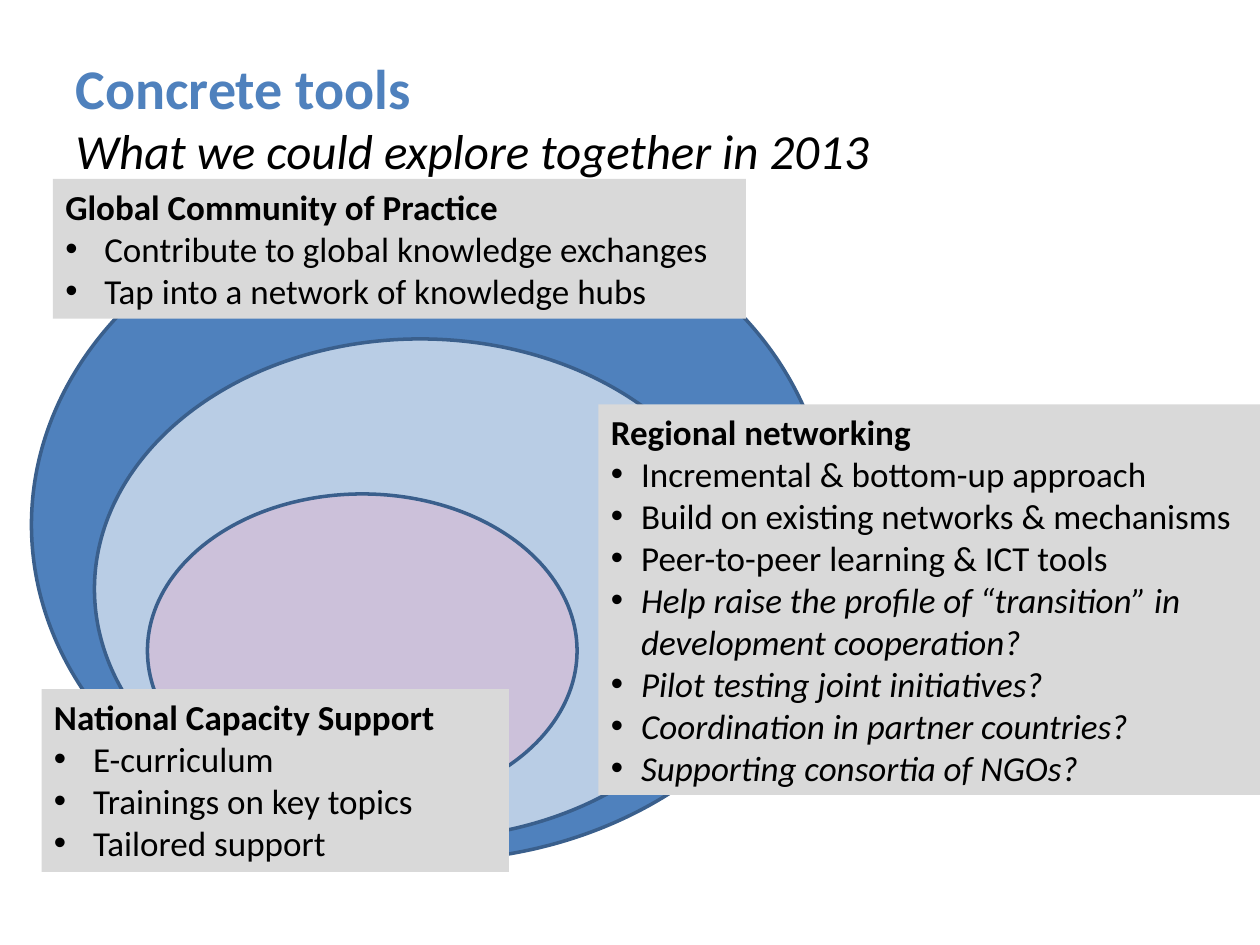
from dataclasses import dataclass

from lxml.etree import SubElement
from pptx import Presentation
from pptx.dml.color import RGBColor
from pptx.enum.shapes import MSO_SHAPE
from pptx.enum.text import MSO_ANCHOR, MSO_AUTO_SIZE, PP_ALIGN
from pptx.oxml.ns import qn
from pptx.slide import Slide
from pptx.util import Inches, Pt

BLUE = RGBColor(0x4F, 0x81, 0xBD)
LIGHT_BLUE = RGBColor(0xB9, 0xCD, 0xE5)
LILAC = RGBColor(0xCC, 0xC1, 0xDA)
OUTLINE = RGBColor(0x3A, 0x5F, 0x8C)
GREY = RGBColor(0xD9, 0xD9, 0xD9)
BLACK = RGBColor(0, 0, 0)


@dataclass(frozen=True)
class Area:
    left: float
    top: float
    width: float
    height: float

    def lengths(self) -> tuple:
        return tuple(map(Inches, (self.left, self.top, self.width, self.height)))


@dataclass(frozen=True)
class Ring:
    area: Area
    color: RGBColor


@dataclass(frozen=True)
class Panel:
    area: Area
    heading: str
    points: tuple[str, ...]
    questions: tuple[str, ...] = ()
    indent: float = 0.31


RINGS = (
    Ring(Area(0.25, 1.5, 6.33, 5.33), BLUE),
    Ring(Area(0.75, 2.69, 5.17, 3.97), LIGHT_BLUE),
    Ring(Area(1.17, 3.92, 3.41, 2.49), LILAC),
)

PANELS = (
    Panel(
        Area(0.42, 1.42, 5.5, 1.11),
        "Global Community of Practice",
        ("Contribute to global knowledge exchanges", "Tap into a network of knowledge hubs"),
    ),
    Panel(
        Area(4.75, 3.21, 5.67, 3.1),
        "Regional networking",
        (
            "Incremental & bottom-up approach",
            "Build on existing networks & mechanisms",
            "Peer-to-peer learning & ICT tools",
        ),
        (
            "Help raise the profile of “transition” in development cooperation?",
            "Pilot testing joint initiatives?",
            "Coordination in partner countries?",
            "Supporting consortia of NGOs?",
        ),
        indent=0.24,
    ),
    Panel(
        Area(0.33, 5.47, 3.71, 1.45),
        "National Capacity Support",
        ("E-curriculum", "Trainings on key topics", "Tailored support"),
    ),
)


def add_text(paragraph, text: str, size: int, color: RGBColor = BLACK,
             bold: bool = False, italic: bool = False) -> None:
    run = paragraph.add_run()
    run.text = text
    formats = {"name": "Calibri", "size": Pt(size), "bold": bold, "italic": italic}
    for name, value in formats.items():
        setattr(run.font, name, value)
    run.font.color.rgb = color


def set_bullet(paragraph, indent: float) -> None:
    properties = paragraph._p.get_or_add_pPr()
    properties.set("marL", str(Inches(indent)))
    properties.set("indent", str(Inches(-indent)))
    SubElement(properties, qn("a:buFont")).set("typeface", "Arial")
    SubElement(properties, qn("a:buChar")).set("char", "•")


def fill_title(slide: Slide) -> None:
    title = slide.shapes.title
    title.left, title.top, title.width, title.height = Area(0.5, 0.3, 9, 1.25).lengths()
    title.text_frame.vertical_anchor = MSO_ANCHOR.MIDDLE
    paragraph = title.text_frame.paragraphs[0]
    paragraph.alignment = PP_ALIGN.LEFT
    add_text(paragraph, "Concrete tools", 32, BLUE, bold=True)
    paragraph.add_line_break()
    add_text(paragraph, "What we could explore together in 2013", 28, italic=True)


def add_ring(slide: Slide, ring: Ring) -> None:
    shape = slide.shapes.add_shape(MSO_SHAPE.OVAL, *ring.area.lengths())
    shape.shadow.inherit = False
    shape.fill.solid()
    shape.fill.fore_color.rgb = ring.color
    shape.line.color.rgb = OUTLINE
    shape.line.width = Pt(2)


def add_panel(slide: Slide, panel: Panel) -> None:
    shape = slide.shapes.add_textbox(*panel.area.lengths())
    shape.fill.solid()
    shape.fill.fore_color.rgb = GREY
    frame = shape.text_frame
    formats = {"word_wrap": True, "auto_size": MSO_AUTO_SIZE.SHAPE_TO_FIT_TEXT}
    for name, value in formats.items():
        setattr(frame, name, value)
    add_text(frame.paragraphs[0], panel.heading, 20, bold=True)
    for text in panel.points + panel.questions:
        paragraph = frame.add_paragraph()
        set_bullet(paragraph, panel.indent)
        add_text(paragraph, text, 20, italic=text in panel.questions)


def main() -> None:
    presentation = Presentation()
    presentation.slide_width = Inches(10)
    presentation.slide_height = Inches(7.5)
    slide = presentation.slides.add_slide(presentation.slide_layouts[5])
    fill_title(slide)
    for ring in RINGS:
        add_ring(slide, ring)
    for panel in PANELS:
        add_panel(slide, panel)
    presentation.save("out.pptx")


if __name__ == "__main__":
    main()
